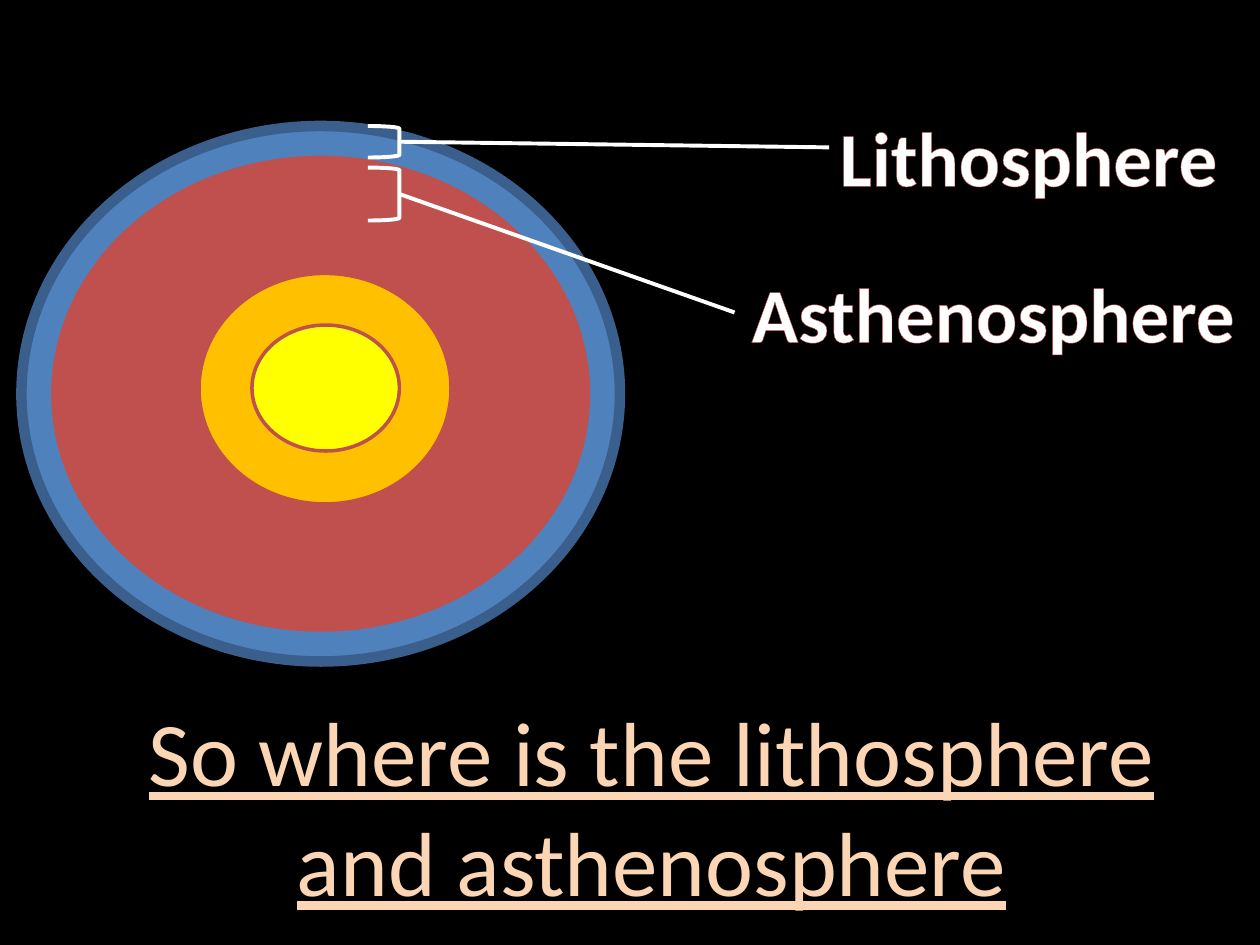
from pptx import Presentation, util as u
from pptx.dml.color import RGBColor
from pptx.enum import shapes, text
from pptx.oxml import parse_xml
from pptx.oxml.ns import nsdecls
from lxml import etree

COLORS = {
    "space": "000000", "crust": "4F81BD", "crust_edge": "3A5F8C",
    "mantle": "C0504D", "outer_core": "FFC000", "inner_core": "FFFF00",
    "white": "FFFFFF", "title": "FCD5B5",
}
TITLE = "So where is the lithosphere and asthenosphere"
# fill, edge, edge width, (left, top, width, height)
LAYERS = [
    ("crust", "crust_edge", 6, (0.17, 1, 4.75, 4.25)),
    ("mantle", "mantle", 2, (0.42, 1.25, 4.25, 3.75)),
    ("outer_core", "mantle", 2, (1.58, 2.17, 2, 1.83)),
    ("inner_core", "mantle", 2, (2, 2.58, 1.17, 1)),
]
# name, bracket top, bracket height, leader end, label box
CALLOUTS = [
    ("Lithosphere", 1, 0.25, (6.58, 1.17), (6.33, 0.82, 3.67, 0.84)),
    ("Asthenosphere", 1.33, 0.42, (5.83, 2.48), (5.83, 2.06, 4.11, 0.84)),
]
BRACKET_LEFT, BRACKET_WIDTH = 2.92, 0.25
LEADER_WIDTH = 2.25


def rgb(name):
    return RGBColor.from_string(COLORS[name])


def inches(values):
    return [u.Inches(v) for v in values]


def set_line(sp, color, width):
    sp.line.color.rgb = rgb(color)
    sp.line.width = u.Pt(width)


def add_shape(kind, box, fill, edge, width):
    sp = slide.shapes.add_shape(kind, *inches(box))
    sp.shadow.inherit = False
    if fill:
        sp.fill.solid()
        sp.fill.fore_color.rgb = rgb(fill)
    else:
        sp.fill.background()
    set_line(sp, edge, width)


def add_text(words, box, size, color, anchor):
    tf = slide.shapes.add_textbox(*inches(box)).text_frame
    tf.word_wrap = True
    tf.vertical_anchor = anchor
    p = tf.paragraphs[0]
    p.alignment = text.PP_ALIGN.CENTER
    p.font.name, p.font.size = "Calibri", u.Pt(size)
    p.font.color.rgb = rgb(color)
    r = p.add_run()
    r.text = words
    return tf, p, r


prs = Presentation()
prs.slide_width, prs.slide_height = inches((10, 7.5))
slide = prs.slides.add_slide(prs.slide_layouts[6])
slide.background.fill.solid()
slide.background.fill.fore_color.rgb = rgb("space")

# Title
_, p, _ = add_text(TITLE, (0.67, 5.89, 9, 1), 52, "title", text.MSO_ANCHOR.MIDDLE)
p.font.underline = True

# Earth's layers, outermost first
for fill, edge, width, box in LAYERS:
    add_shape(shapes.MSO_SHAPE.OVAL, box, fill, edge, width)

# Brackets, leader lines and labels
for name, top, height, end, box in CALLOUTS:
    add_shape(shapes.MSO_SHAPE.RIGHT_BRACKET,
              (BRACKET_LEFT, top, BRACKET_WIDTH, height), None, "white", LEADER_WIDTH)
    start = (BRACKET_LEFT + BRACKET_WIDTH, top + height / 2)
    leader = slide.shapes.add_connector(shapes.MSO_CONNECTOR.STRAIGHT, *inches(start + end))
    set_line(leader, "white", LEADER_WIDTH)
    leader._element.spPr.append(parse_xml(f"<a:effectLst {nsdecls('a')}/>"))

    tf, p, r = add_text(name, box, 44, "white", text.MSO_ANCHOR.TOP)
    tf.auto_size = text.MSO_AUTO_SIZE.SHAPE_TO_FIT_TEXT
    p.font.bold = True
    # Letter outline
    r.font._element.insert(0, parse_xml(
        f'<a:ln {nsdecls("a")} w="{u.Pt(1.75)}"><a:solidFill>'
        f'<a:srgbClr val="{COLORS["mantle"]}"/></a:solidFill></a:ln>'))

prs.save("out.pptx")
